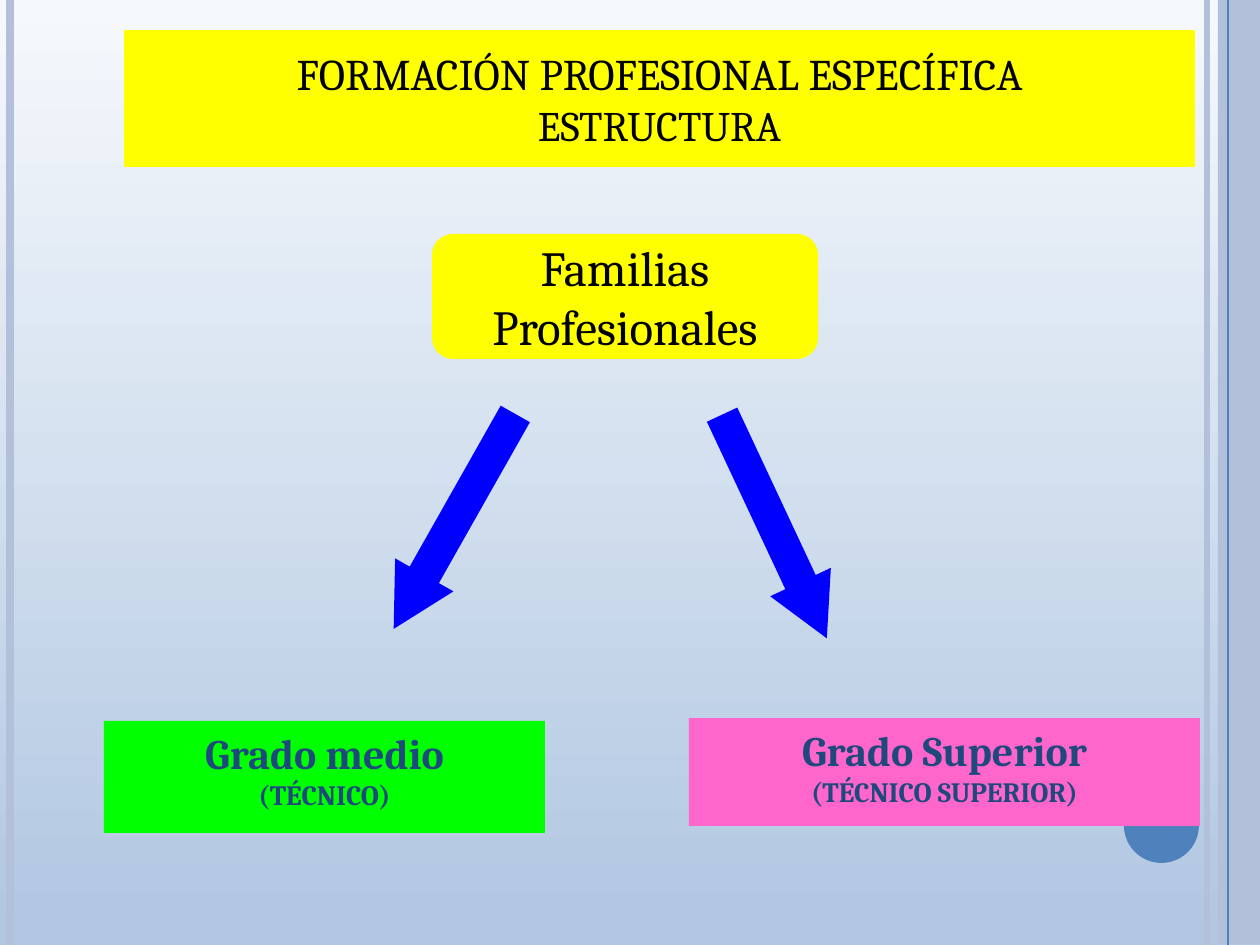
"""Build the slide on the structure of specific vocational training."""
from pptx import Presentation
from pptx.dml import color
from pptx.enum import shapes, text
from pptx.oxml import ns
from pptx.util import Emu, Pt
from lxml import etree

SCALE = 914400 / 126
WIDTH, HEIGHT = 1260, 945
FONT = "Cambria"
COLORS = {
    "sky": "F6F9FC", "haze": "B0C6E1", "rail": "B2C0DA", "accent": "4F81BD",
    "yellow": "FFFF00", "green": "00FF00", "pink": "FF66CC", "blue": "0000FF",
    "black": "000000", "navy": "1F497D",
}
KINDS = shapes.MSO_SHAPE


def px(length):
    """Turn pixels into EMU."""
    return Emu(round(length * SCALE))


def rgb(name):
    """Look up a named colour."""
    return color.RGBColor.from_string(COLORS[name])


def paint_background(page):
    """Fill the page with a vertical gradient."""
    fill = page.background.fill
    fill.gradient()
    fill.gradient_angle = 270
    for stop, name, position in zip(fill.gradient_stops, ("sky", "haze"), (0, 1)):
        stop.color.rgb = rgb(name)
        stop.position = position


def add_rail(page, x, name, weight):
    """Draw a vertical line over the full page height."""
    rail = page.shapes.add_connector(
        shapes.MSO_CONNECTOR.STRAIGHT, px(x), px(0), px(x), px(HEIGHT))
    rail.line.color.rgb = rgb(name)
    rail.line.width = Pt(weight)
    etree.SubElement(rail.element.spPr, ns.qn("a:effectLst"))


def add_block(page, kind, area, fill, rotation=0):
    """Add a plain filled shape."""
    block = page.shapes.add_shape(kind, *map(px, area))
    block.fill.solid()
    block.fill.fore_color.rgb = rgb(fill)
    block.line.fill.background()
    block.shadow.inherit = False
    block.rotation = rotation
    return block


def add_arrow(page, area, rotation):
    """Add a rotated block arrow."""
    arrow = add_block(page, KINDS.DOWN_ARROW, area, "blue", rotation)
    arrow.adjustments[0] = 0.5
    arrow.adjustments[1] = 0.926


def write_line(para, wording, *, size, ink="black", bold=False):
    """Write one centred line of formatted text."""
    para.alignment = text.PP_ALIGN.CENTER
    span = para.add_run()
    span.text = wording
    span.font.name = FONT
    span.font.size = Pt(size)
    span.font.bold = bold
    span.font.color.rgb = rgb(ink)


def write_lines(box, lines, *, anchor=text.MSO_ANCHOR.MIDDLE, wrap=False, **style):
    """Write (wording, size) lines into a shape."""
    frame = box.text_frame
    frame.auto_size = text.MSO_AUTO_SIZE.NONE
    frame.word_wrap = wrap
    frame.vertical_anchor = anchor
    for index, (wording, size) in enumerate(lines):
        para = frame.add_paragraph() if index else frame.paragraphs[0]
        write_line(para, wording, size=size, **style)


def place_title(page, area, fill, lines):
    """Move, fill and write the title placeholder."""
    title = page.shapes.title
    title.left, title.top, title.width, title.height = map(px, area)
    title.fill.solid()
    title.fill.fore_color.rgb = rgb(fill)
    write_lines(title, lines)


def add_grade(page, area, fill, name, degree):
    """Add a box with a grade and its degree."""
    box = add_block(page, KINDS.RECTANGLE, area, fill)
    write_lines(box, [(name, 24), (degree, 16)], anchor=text.MSO_ANCHOR.TOP,
                wrap=True, ink="navy", bold=True)


def main():
    """Build and save the deck."""
    deck = Presentation()
    deck.slide_width, deck.slide_height = px(WIDTH), px(HEIGHT)
    page = deck.slides.add_slide(deck.slide_layouts[5])

    paint_background(page)
    add_rail(page, 1207, "rail", 3)
    add_rail(page, 10, "rail", 4.5)
    add_block(page, KINDS.RECTANGLE, (1218, 0, 42, 944), "rail")
    add_rail(page, 1228, "accent", 0.75)
    add_block(page, KINDS.OVAL, (1124, 788, 75, 75), "accent")

    place_title(page, (124, 30, 1071, 137), "yellow",
                [("FORMACIÓN PROFESIONAL ESPECÍFICA", 25), ("ESTRUCTURA", 24)])
    add_grade(page, (104, 721, 441, 112), "green", "Grado medio", "(TÉCNICO)")
    add_grade(page, (689, 718, 511, 108), "pink",
              "Grado Superior", "(TÉCNICO SUPERIOR)")
    families = add_block(page, KINDS.FLOWCHART_ALTERNATE_PROCESS,
                         (432, 234, 386, 125), "yellow")
    write_lines(families, [("Familias", 28), ("Profesionales", 28)])
    add_arrow(page, (421, 398, 67, 247), 29.5)
    add_arrow(page, (741, 403, 67, 247), 334.9)

    deck.save("out.pptx")


if __name__ == "__main__":
    main()
